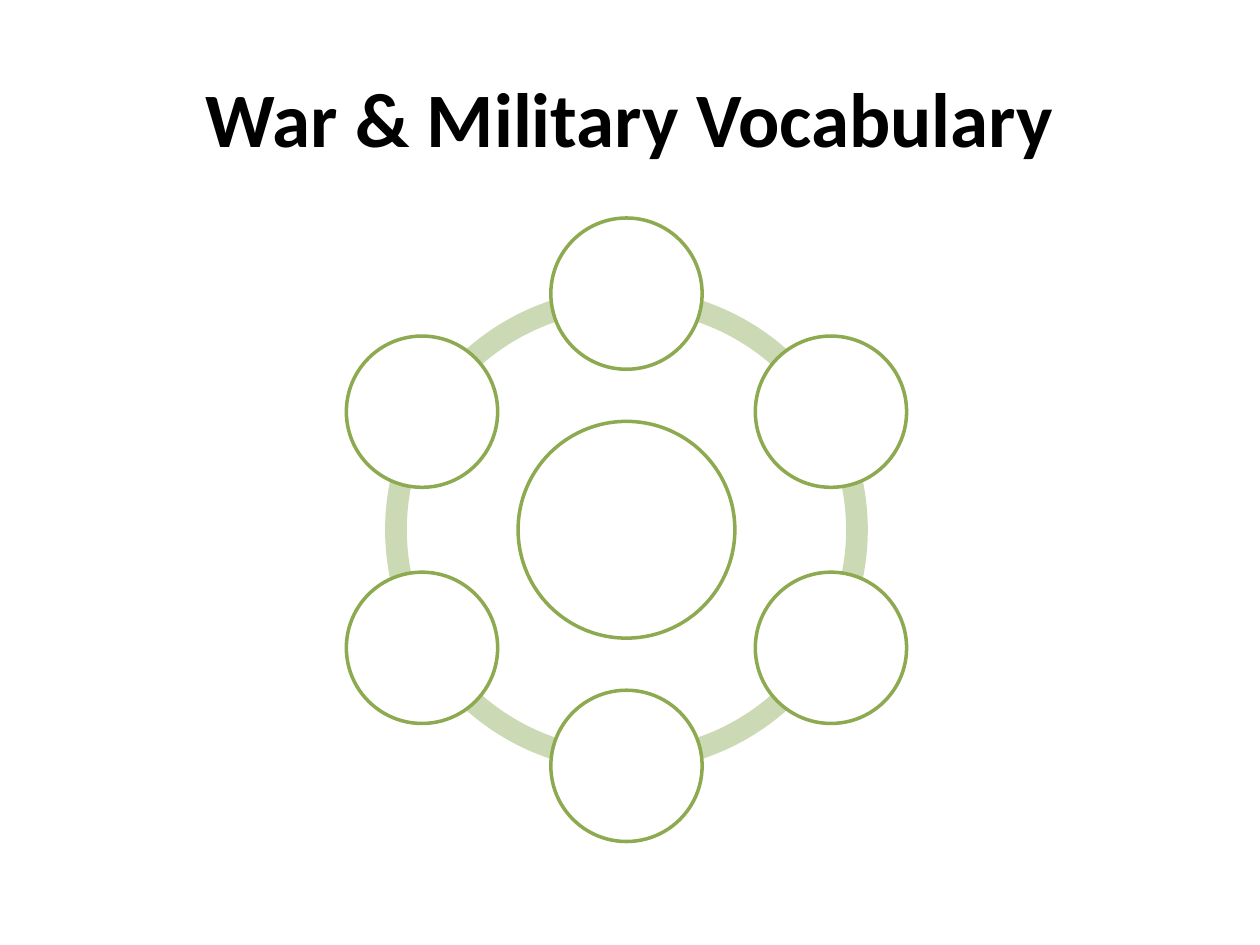
from math import cos, radians, sin

from pptx import Presentation
from pptx.dml.color import RGBColor
from pptx.enum.shapes import MSO_SHAPE
from pptx.enum.text import MSO_ANCHOR, PP_ALIGN
from pptx.util import Cm, Pt

HUES = {"ink": "000000", "ring": "CBDAB5", "edge": "8DAA51", "disc": "FFFFFF"}

# Wheel geometry in centimetres
MID_X, MID_Y = 12.63, 10.68
RING = 9.73
ORBIT = 4.76
HUB, NODE = 4.37, 3.05
COUNT = 6
STEP = 360 // COUNT

deck = Presentation()
deck.slide_width, deck.slide_height = Cm(25.4), Cm(19.05)
slide = deck.slides.add_slide(deck.slide_layouts[5])

# Title
title = slide.shapes.title
title.left, title.top = Cm(1.27), Cm(0.76)
title.width, title.height = Cm(22.86), Cm(3.18)
frame = title.text_frame
frame.vertical_anchor = MSO_ANCHOR.MIDDLE
para = frame.paragraphs[0]
para.alignment = PP_ALIGN.CENTER
run = para.add_run()
run.text = "War & Military Vocabulary"
run.font.name = "Calibri"
run.font.size = Pt(44)
run.font.bold = True
run.font.color.rgb = RGBColor.from_string(HUES["ink"])

wheel = slide.shapes.add_group_shape()


def add_round(kind, x, y, size, fill, edge=None):
    """Add a shape of equal width and height, centred on x, y."""
    shape = wheel.shapes.add_shape(
        kind, Cm(x - size / 2), Cm(y - size / 2), Cm(size), Cm(size))
    shape.shadow.inherit = False
    shape.fill.solid()
    shape.fill.fore_color.rgb = RGBColor.from_string(HUES[fill])
    if edge:
        shape.line.color.rgb = RGBColor.from_string(HUES[edge])
        shape.line.width = Pt(2)
    else:
        shape.line.fill.background()
    return shape


# Ring of arcs; an angle adjustment of 0.6 is one degree
for i in range(COUNT):
    start = (210 - i * STEP) % 360
    arc = add_round(MSO_SHAPE.BLOCK_ARC, MID_X, MID_Y, RING, "ring")
    arc.adjustments[0] = start * 0.6
    arc.adjustments[1] = (start + STEP) % 360 * 0.6
    arc.adjustments[2] = 0.045

# Hub
add_round(MSO_SHAPE.OVAL, MID_X, MID_Y, HUB, "disc", "edge")

# Outer circles, clockwise from the top
for i in range(COUNT):
    turn = radians(i * STEP - 90)
    add_round(MSO_SHAPE.OVAL, MID_X + ORBIT * cos(turn),
              MID_Y + ORBIT * sin(turn), NODE, "disc", "edge")

deck.save("out.pptx")
